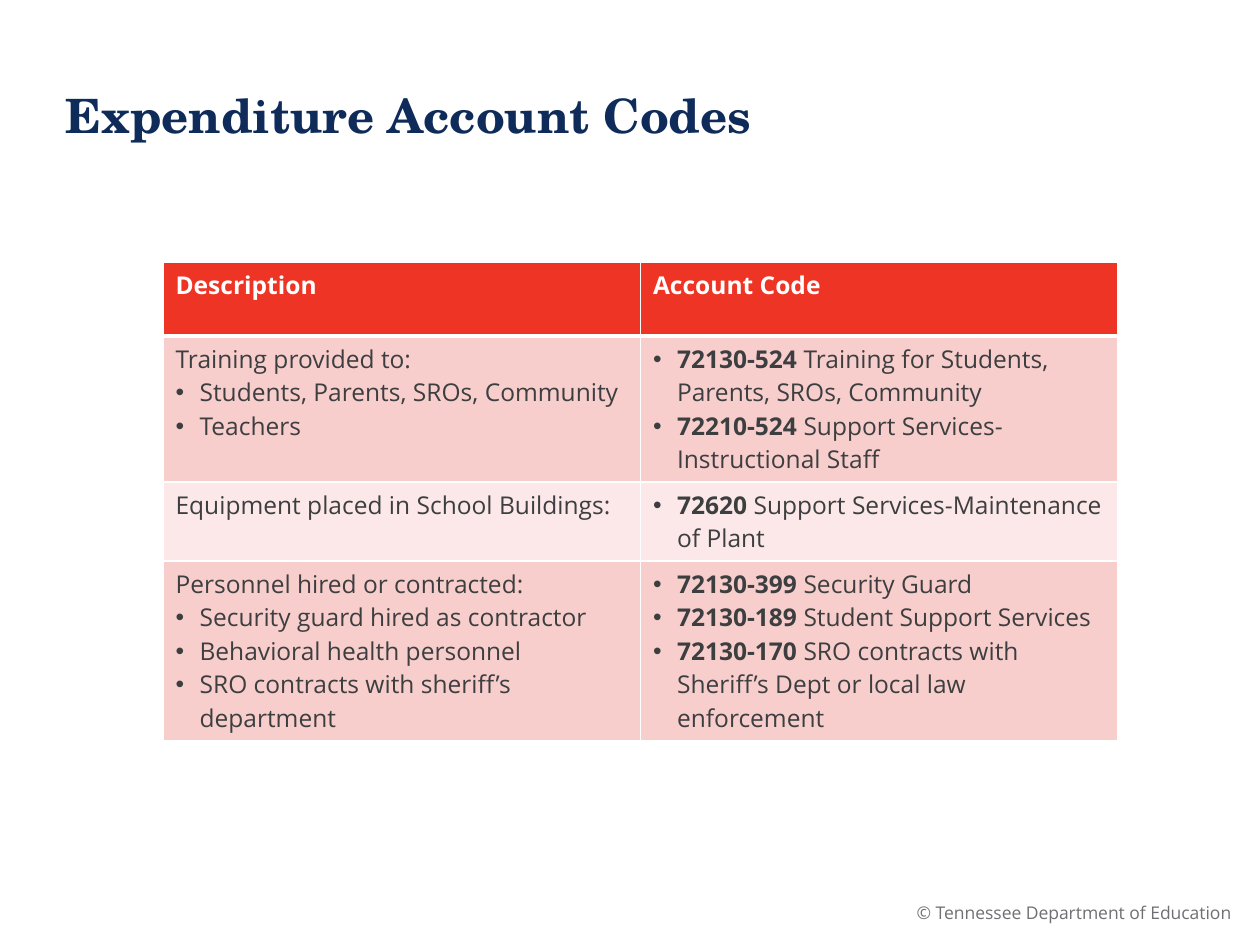
from pptx import Presentation
from pptx.dml.color import RGBColor
from pptx.enum.text import MSO_ANCHOR, PP_ALIGN
from pptx.oxml.ns import qn
from pptx.util import Pt
from lxml.etree import SubElement

SCALE = 914400 / 126
COLORS = {
    "title": "0E2B5A", "footer": "6E7073", "body": "3C3E40", "white": "FFFFFF",
    "header": "EE3424", "band": "F8CECD", "light": "FCE8E8",
}
BODY_FONT = "Open Sans"
TITLE_FONT = "TeX Gyre Schola"
HEADINGS = ["Description", "Account Code"]
ENTRIES = [
    ("Training provided to:",
     ["Students, Parents, SROs, Community", "Teachers"],
     [("72130-524", "Training for Students, Parents, SROs, Community"),
      ("72210-524", "Support Services-Instructional Staff")]),
    ("Equipment placed in School Buildings:",
     [],
     [("72620", "Support Services-Maintenance of Plant")]),
    ("Personnel hired or contracted:",
     ["Security guard hired as contractor", "Behavioral health personnel",
      "SRO contracts with sheriff’s department"],
     [("72130-399", "Security Guard"),
      ("72130-189", "Student Support Services"),
      ("72130-170", "SRO contracts with Sheriff’s Dept or local law enforcement")]),
]
ROW_HEIGHTS = [74, 146, 79, 180]


def emu(px):
    return round(px * SCALE)


def style(font, name, size, color, bold=None):
    font.name = name
    font.size = Pt(size)
    font.color.rgb = RGBColor.from_string(COLORS[color])
    font.bold = bold


def add_text(page, box, text, anchor=MSO_ANCHOR.TOP):
    frame = page.shapes.add_textbox(*map(emu, box)).text_frame
    frame.word_wrap = True
    frame.vertical_anchor = anchor
    para = frame.paragraphs[0]
    para.text = text
    return para


def add_title(page, box):
    para = add_text(page, box, "Expenditure Account Codes", MSO_ANCHOR.MIDDLE)
    style(para.font, TITLE_FONT, 27, "title", True)


def add_footer(page, box):
    para = add_text(page, box, "© Tennessee Department of Education ")
    para.alignment = PP_ALIGN.RIGHT
    para.line_spacing = 0.9
    style(para.font, BODY_FONT, 10, "footer")


def set_borders(cell, widths):
    properties = cell._tc.get_or_add_tcPr()
    for side, width in zip("LRTB", widths):
        line = SubElement(properties, qn(f"a:ln{side}"), w=str(Pt(width)))
        fill = SubElement(line, qn("a:solidFill"))
        SubElement(fill, qn("a:srgbClr"), val=COLORS["white"])


def set_bullet(para):
    properties = para._p.get_or_add_pPr()
    properties.set("marL", str(emu(24)))
    properties.set("indent", str(-emu(24)))
    SubElement(properties, qn("a:buFont"), typeface="Arial")
    SubElement(properties, qn("a:buChar"), char="•")


def fill_cell(cell, lines, fill, color="body", bold=None):
    cell.fill.solid()
    cell.fill.fore_color.rgb = RGBColor.from_string(COLORS[fill])
    frame = cell.text_frame
    for index, (bulleted, spans) in enumerate(lines):
        para = frame.add_paragraph() if index else frame.paragraphs[0]
        if bulleted:
            set_bullet(para)
        style(para.font, BODY_FONT, 14, color, bold)
        for text, strong in spans:
            span = para.add_run()
            span.text = text
            span.font.bold = strong


def add_code_table(page, box):
    frame = page.shapes.add_table(len(ROW_HEIGHTS), len(HEADINGS), *map(emu, box))
    table = frame.table
    for column in table.columns:
        column.width = emu(box[2] / len(HEADINGS))
    for index, (row, height) in enumerate(zip(table.rows, ROW_HEIGHTS)):
        row.height = emu(height)
        top = 3 if index == 1 else 1
        bottom = 3 if index == 0 else 1
        for cell in row.cells:
            set_borders(cell, (1, 1, top, bottom))
    for column, heading in enumerate(HEADINGS):
        fill_cell(table.cell(0, column), [(False, [(heading, True)])],
                  "header", "white", True)
    for row, (lead, items, codes) in enumerate(ENTRIES, 1):
        fill = "band" if row % 2 else "light"
        description = [(False, [(lead, False)])]
        description += [(True, [(item, False)]) for item in items]
        accounts = [(True, [(code, True), (f" {name}", False)]) for code, name in codes]
        fill_cell(table.cell(row, 0), description, fill)
        fill_cell(table.cell(row, 1), accounts, fill)


def main():
    deck = Presentation()
    deck.slide_width, deck.slide_height = emu(1260), emu(945)
    page = deck.slides.add_slide(deck.slide_layouts[6])
    add_footer(page, (854, 898, 394, 32))
    add_title(page, (53, 32, 946, 166))
    add_code_table(page, (163, 262, 955, sum(ROW_HEIGHTS)))
    deck.save("out.pptx")


if __name__ == "__main__":
    main()
